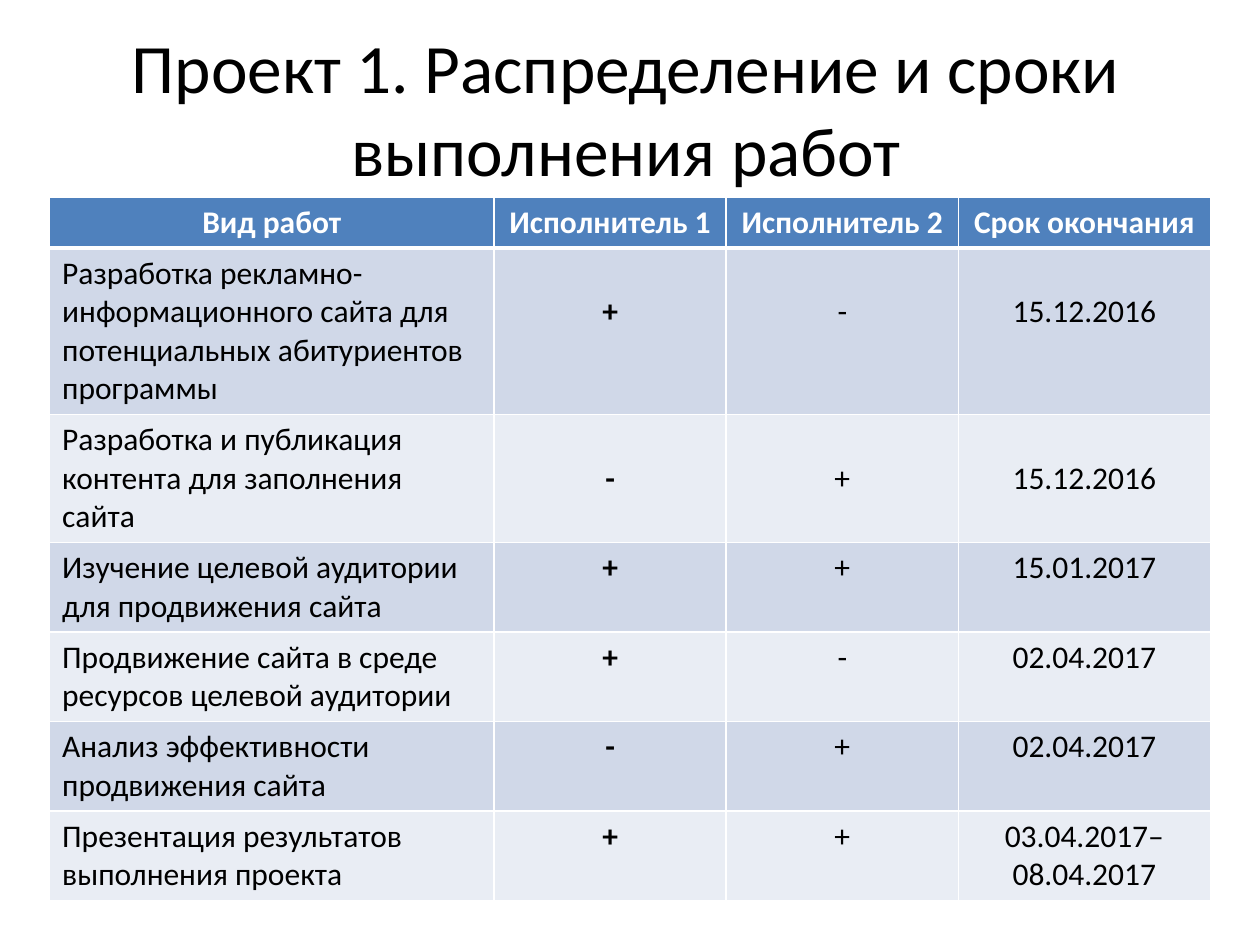
from dataclasses import dataclass

from lxml import etree
from pptx import Presentation
from pptx.dml.color import RGBColor
from pptx.enum.text import MSO_ANCHOR, MSO_AUTO_SIZE, PP_ALIGN
from pptx.oxml.ns import qn
from pptx.util import Cm, Pt

LEFT, CENTER = PP_ALIGN.LEFT, PP_ALIGN.CENTER
MIDDLE, NO_FIT = MSO_ANCHOR.MIDDLE, MSO_AUTO_SIZE.NONE
TITLE_ONLY = 5


@dataclass(frozen=True)
class Theme:
    font: str = "Calibri"
    title_size: float = 39.6
    table_size: float = 18
    text: str = "000000"
    header_text: str = "FFFFFF"
    header_fill: str = "4F81BD"
    band_fills: tuple = ("D0D8E8", "E9EDF4")
    border: str = "FFFFFF"
    thin: float = 1
    thick: float = 3


theme = Theme()


def add_text(para, text, size, color, bold, align):
    para.alignment = align
    span = para.add_run()
    span.text = text
    span.font.name = theme.font
    span.font.size = Pt(size)
    span.font.bold = bold
    span.font.color.rgb = RGBColor.from_string(color)


def add_border(cell, side, width):
    line = etree.SubElement(cell._tc.get_or_add_tcPr(), qn("a:ln" + side), w=str(Pt(width)))
    fill = etree.SubElement(line, qn("a:solidFill"))
    etree.SubElement(fill, qn("a:srgbClr"), val=theme.border)


deck = Presentation()
deck.slide_width, deck.slide_height = Cm(25.4), Cm(19.05)
page = deck.slides.add_slide(deck.slide_layouts[TITLE_ONLY])

# Title
title = page.shapes.title
title.left, title.top, title.width, title.height = Cm(1.19), Cm(0.58), Cm(22.86), Cm(3.18)
title.text_frame.word_wrap = True
title.text_frame.auto_size = NO_FIT
title.text_frame.vertical_anchor = MIDDLE
add_text(title.text_frame.paragraphs[0], "Проект 1. Распределение и сроки выполнения работ",
         theme.title_size, theme.text, False, CENTER)

# Schedule: header row, then work, two performers and deadline
schedule = [
    ("Вид работ", "Исполнитель 1", "Исполнитель 2", "Срок окончания"),
    ("Разработка рекламно-информационного сайта для потенциальных абитуриентов программы",
     "+", "-", "15.12.2016"),
    ("Разработка и публикация контента для заполнения сайта", "-", "+", "15.12.2016"),
    ("Изучение целевой аудитории для продвижения сайта", "+", "+", "15.01.2017"),
    ("Продвижение сайта в среде ресурсов целевой аудитории", "+", "-", "02.04.2017"),
    ("Анализ эффективности продвижения сайта", "-", "+", "02.04.2017"),
    ("Презентация результатов выполнения проекта", "+", "+", "03.04.2017– 08.04.2017"),
]
column_widths = [Cm(8.96), Cm(4.68), Cm(4.68), Cm(5.08)]
row_height = Cm(1.03)  # minimum: rows grow with their text
lowered_rows = (1, 2)  # marks and dates start one line lower here
lowered_margin = Cm(0.9)

table = page.shapes.add_table(len(schedule), len(column_widths), Cm(1), Cm(3.97),
                              sum(column_widths), row_height * len(schedule)).table
for column, width in zip(table.columns, column_widths):
    column.width = width

for row_index, row in enumerate(schedule):
    table.rows[row_index].height = row_height
    is_header = row_index == 0
    fill = theme.header_fill if is_header else theme.band_fills[(row_index - 1) % 2]
    color = theme.header_text if is_header else theme.text
    for column_index, text in enumerate(row):
        cell = table.cell(row_index, column_index)
        if row_index in lowered_rows and column_index > 0:
            cell.margin_top = lowered_margin
        add_text(cell.text_frame.paragraphs[0], text, theme.table_size, color,
                 is_header or column_index == 1,
                 CENTER if is_header or column_index > 0 else LEFT)

        # Borders go before the fill in the cell properties
        for side in "LRTB":
            under_header = (row_index, side) in ((0, "B"), (1, "T"))
            add_border(cell, side, theme.thick if under_header else theme.thin)
        cell.fill.solid()
        cell.fill.fore_color.rgb = RGBColor.from_string(fill)

deck.save("out.pptx")
